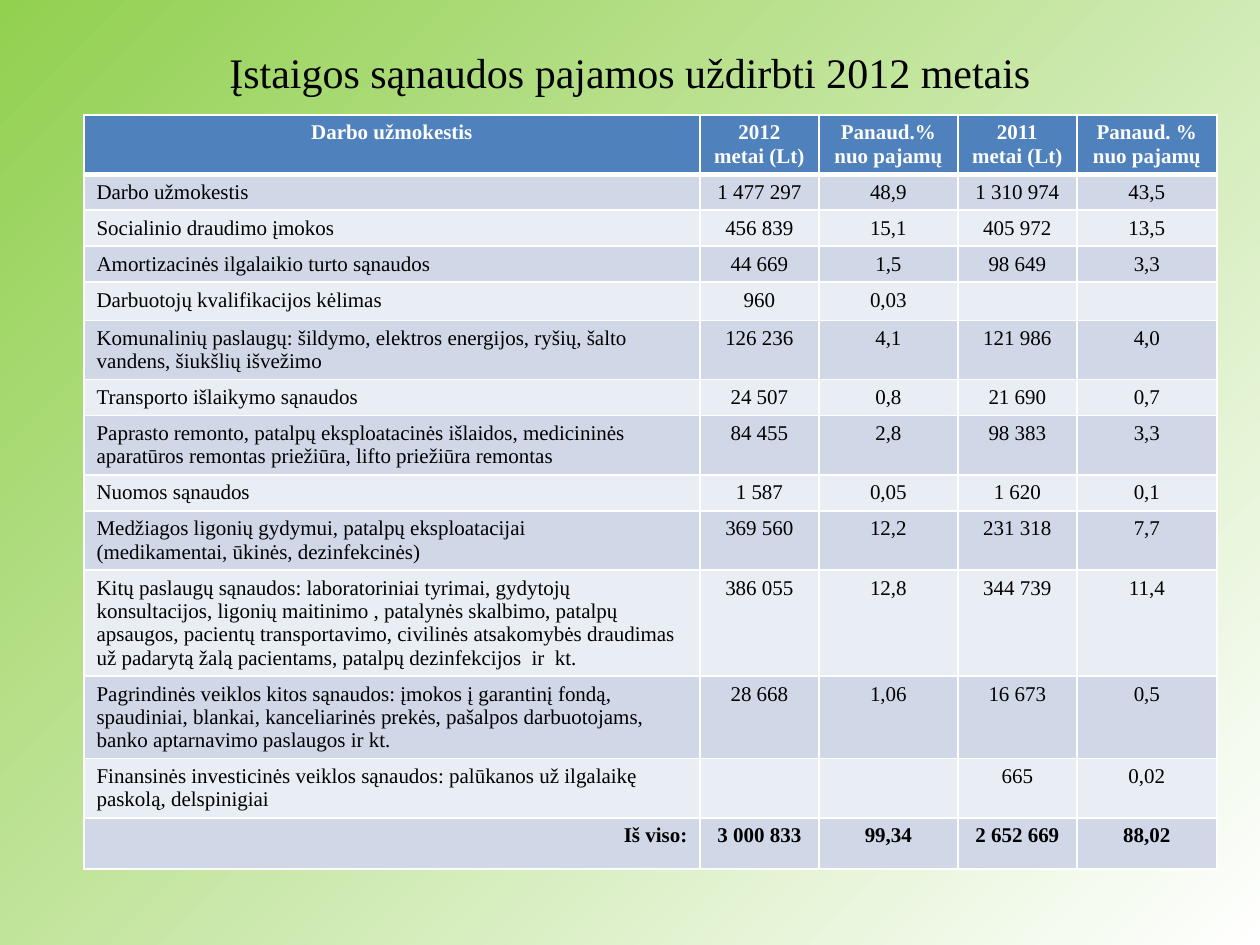
from dataclasses import dataclass

from lxml.etree import SubElement
from pptx import Presentation
from pptx.dml.color import RGBColor
from pptx.enum.text import MSO_ANCHOR, PP_ALIGN
from pptx.oxml.ns import qn
from pptx.util import Emu, Pt

SCALE = 914400 / 126


def px(n):
    return Emu(round(n * SCALE))


@dataclass(frozen=True)
class Theme:
    font: str = "Times New Roman"
    title: int = 24
    body: int = 12
    ink: str = "000000"
    white: str = "FFFFFF"
    green: str = "92D050"
    head: str = "4F81BD"
    bands: tuple = ("D0D8E8", "E9EDF4")
    thin: int = 1
    thick: int = 3


def write(frame, text, *, font, size, color, bold=False, align=PP_ALIGN.LEFT):
    for i, line in enumerate(text.split("\n")):
        para = frame.add_paragraph() if i else frame.paragraphs[0]
        para.alignment = align
        if not line:
            SubElement(para._p, qn("a:endParaRPr"), sz=str(size * 100))
            continue
        run = para.add_run()
        run.text = line
        run.font.name = font
        run.font.size = Pt(size)
        run.font.bold = bold
        run.font.color.rgb = RGBColor.from_string(color)


class Deck:
    def __init__(self, theme):
        self.theme = theme
        self.file = Presentation()
        self.file.slide_width, self.file.slide_height = px(1260), px(945)
        self.slide = self.file.slides.add_slide(self.file.slide_layouts[5])

    def back(self, start, end, angle):
        fill = self.slide.background.fill
        fill.gradient()
        fill.gradient_angle = angle
        for stop, color in zip(fill.gradient_stops, (start, end)):
            stop.color.rgb = RGBColor.from_string(color)

    def title(self, text, x, y, w, h):
        shape = self.slide.shapes.title
        shape.left, shape.top, shape.width, shape.height = map(px, (x, y, w, h))
        frame = shape.text_frame
        frame.word_wrap = True
        frame.vertical_anchor = MSO_ANCHOR.MIDDLE
        write(frame, text, font=self.theme.font, size=self.theme.title,
              color=self.theme.ink, align=PP_ALIGN.CENTER)

    def edges(self, cell, top, base):
        props = cell._tc.get_or_add_tcPr()
        thin = self.theme.thin
        for side, width in zip("LRTB", (thin, thin, top, base)):
            line = SubElement(props, qn(f"a:ln{side}"), w=str(Pt(width)))
            fill = SubElement(line, qn("a:solidFill"))
            SubElement(fill, qn("a:srgbClr"), val=self.theme.white)

    def cell(self, cell, text, row, fill, **style):
        thin, thick = self.theme.thin, self.theme.thick
        self.edges(cell, thick if row == 1 else thin, thin if row else thick)
        cell.fill.solid()
        cell.fill.fore_color.rgb = RGBColor.from_string(fill)
        write(cell.text_frame, text, font=self.theme.font,
              size=self.theme.body, **style)

    def table(self, rows, x, y, widths, heights):
        theme = self.theme
        grid = self.slide.shapes.add_table(
            len(rows), len(widths), px(x), px(y),
            px(sum(widths)), px(sum(heights))).table
        for col, width in zip(grid.columns, widths):
            col.width = px(width)
        last = len(rows) - 1
        for r, (row, height) in enumerate(zip(rows, heights)):
            grid.rows[r].height = px(height)
            fill = theme.bands[(r - 1) % 2] if r else theme.head
            color = theme.ink if r else theme.white
            for c, text in enumerate(row):
                align = PP_ALIGN.CENTER
                if c == 0 and r:
                    align = PP_ALIGN.RIGHT if r == last else PP_ALIGN.LEFT
                self.cell(grid.cell(r, c), text, r, fill, color=color,
                          bold=r in (0, last), align=align)

    def save(self):
        self.file.save("out.pptx")


COSTS = [
    ("Darbo užmokestis", "2012 metai (Lt)", "Panaud.% nuo pajamų",
     "2011 metai (Lt)", "Panaud. % nuo pajamų"),
    ("Darbo užmokestis", "1 477 297", "48,9", "1 310 974", "43,5"),
    ("Socialinio draudimo įmokos", "456 839", "15,1", "405 972", "13,5"),
    ("Amortizacinės ilgalaikio turto sąnaudos",
     "44 669", "1,5", "98 649", "3,3"),
    ("Darbuotojų kvalifikacijos kėlimas", "960", "0,03", "", ""),
    ("Komunalinių paslaugų: šildymo, elektros energijos, ryšių, šalto "
     "vandens, šiukšlių išvežimo", "126 236", "4,1", "121 986", "4,0"),
    ("Transporto išlaikymo sąnaudos", "24 507", "0,8", "21 690", "0,7"),
    ("Paprasto remonto, patalpų eksploatacinės išlaidos, medicininės "
     "aparatūros remontas priežiūra, lifto priežiūra remontas",
     "84 455", "2,8", "98 383", "3,3"),
    ("Nuomos sąnaudos", "1 587", "0,05", "1 620", "0,1"),
    ("Medžiagos ligonių gydymui, patalpų eksploatacijai\n"
     "(medikamentai, ūkinės, dezinfekcinės)",
     "369 560", "12,2", "231 318", "7,7"),
    ("Kitų paslaugų sąnaudos: laboratoriniai tyrimai, gydytojų "
     "konsultacijos, ligonių maitinimo , patalynės skalbimo, patalpų "
     "apsaugos, pacientų transportavimo, civilinės atsakomybės draudimas "
     "už padarytą žalą pacientams, patalpų dezinfekcijos  ir  kt.",
     "386 055", "12,8", "344 739", "11,4"),
    ("Pagrindinės veiklos kitos sąnaudos: įmokos į garantinį fondą, "
     "spaudiniai, blankai, kanceliarinės prekės, pašalpos darbuotojams, "
     "banko aptarnavimo paslaugos ir kt.",
     "28 668", "1,06", "16 673", "0,5"),
    ("Finansinės investicinės veiklos sąnaudos: palūkanos už ilgalaikę "
     "paskolą, delspinigiai", "", "", "665", "0,02"),
    ("Iš viso:", "3 000 833", "99,34", "2 652 669", "88,02"),
]
LINES = [2, 1, 1, 1, 1, 2, 1, 2, 1, 2, 4, 3, 2]


def main():
    theme = Theme()
    deck = Deck(theme)
    deck.back(theme.green, theme.white, 315)
    deck.title("Įstaigos sąnaudos pajamos uždirbti 2012 metais",
               63, 38, 1134, 68)
    heights = [13 + 23 * n for n in LINES] + [51]
    deck.table(COSTS, 84, 115, [616, 119, 139, 119, 140], heights)
    deck.save()


if __name__ == "__main__":
    main()
